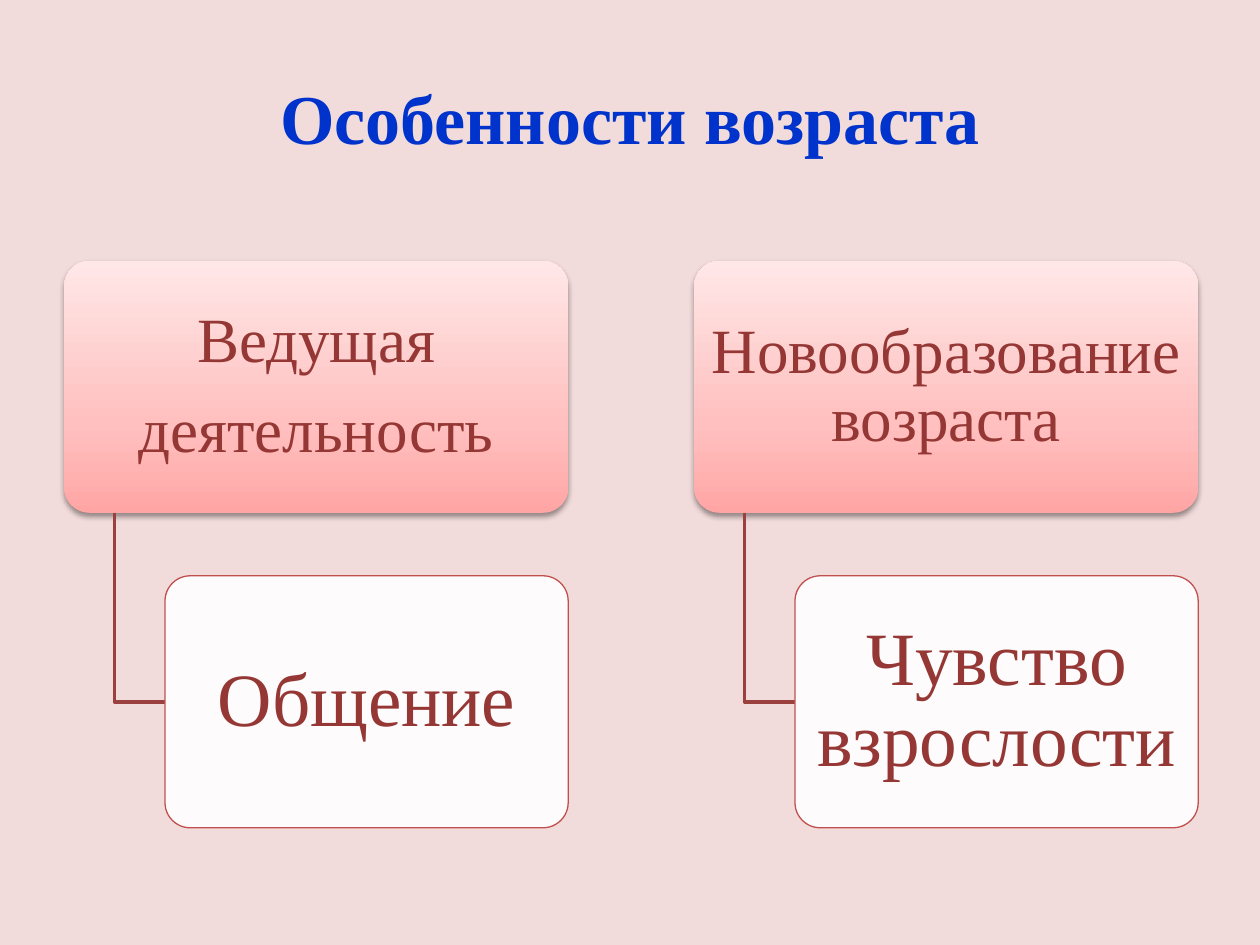
"""Build a slide with two branches that describe features of an age."""
from dataclasses import dataclass

from lxml.etree import SubElement
from pptx import Presentation
from pptx.dml.color import RGBColor
from pptx.enum.shapes import MSO_SHAPE
from pptx.enum.text import MSO_ANCHOR, PP_ALIGN
from pptx.oxml import parse_xml
from pptx.oxml.ns import nsdecls, qn
from pptx.util import Pt

SCALE = 9144


@dataclass(frozen=True)
class Theme:
    """Colours, font and type sizes of the slide."""
    back: str = "F2DCDB"
    title: str = "0033CC"
    text: str = "953735"
    link: str = "9A403E"
    edge: str = "C0504D"
    leaf: str = "FFFFFF"
    stops: tuple = ((0, "FFA6A5"), (35, "FFC0BF"), (100, "FFE7E7"))
    font: str = "Times New Roman"
    head: int = 40
    main: int = 36
    sub: int = 43


THEME = Theme()


def px(*nums):
    """Turn px lengths into EMU."""
    return [num * SCALE for num in nums]


def apply(item, attrs):
    """Set each named attribute on an item."""
    for name, value in attrs.items():
        setattr(item, name, value)


def style(run, size, color, bold=False):
    """Format the font of a run."""
    apply(run.font, {"name": THEME.font, "size": Pt(size), "bold": bold})
    run.font.color.rgb = RGBColor.from_string(color)


def add_title(slide, text):
    """Place and format the title."""
    title = slide.shapes.title
    apply(title, dict(zip(("left", "top", "width", "height"), px(50, 30, 900, 125))))
    title.text_frame.vertical_anchor = MSO_ANCHOR.MIDDLE
    para = title.text_frame.paragraphs[0]
    para.alignment = PP_ALIGN.CENTER
    run = para.add_run()
    run.text = text
    style(run, THEME.head, THEME.title, True)


def add_text(shape, lines, size, side, edge):
    """Fill a box with centred paragraphs."""
    frame = shape.text_frame
    wide, high = px(side, edge)
    apply(frame, {
        "word_wrap": True, "vertical_anchor": MSO_ANCHOR.MIDDLE,
        "margin_left": wide, "margin_right": wide,
        "margin_top": high, "margin_bottom": high,
    })
    for index, line in enumerate(lines):
        para = frame.add_paragraph() if index else frame.paragraphs[0]
        apply(para, {"alignment": PP_ALIGN.CENTER, "line_spacing": 0.9})
        after = SubElement(para._p.get_or_add_pPr(), qn("a:spcAft"))
        SubElement(after, qn("a:spcPct"), val="35000")
        run = para.add_run()
        run.text = line
        style(run, size, THEME.text)


def add_box(slide, *area):
    """Add a rounded box without a shadow."""
    box = slide.shapes.add_shape(MSO_SHAPE.ROUNDED_RECTANGLE, *px(*area))
    box.adjustments[0] = 0.1
    box.shadow.inherit = False
    return box


def add_main(slide, left, top, lines):
    """Add a shaded main box with a soft shadow."""
    box = add_box(slide, left, top, 400, 200)
    box.line.fill.background()
    stops = "".join(
        f'<a:gs pos="{pos * 1000}"><a:srgbClr val="{color}"/></a:gs>'
        for pos, color in THEME.stops)
    props = box._element.spPr
    props.find(qn("a:prstGeom")).addnext(parse_xml(
        f'<a:gradFill {nsdecls("a")} rotWithShape="1"><a:gsLst>{stops}</a:gsLst>'
        '<a:lin ang="16200000" scaled="0"/></a:gradFill>'))
    props.find(qn("a:effectLst")).append(parse_xml(
        f'<a:outerShdw {nsdecls("a")} blurRad="40000" dist="20000" dir="5400000" '
        'rotWithShape="0"><a:srgbClr val="000000"><a:alpha val="38000"/>'
        '</a:srgbClr></a:outerShdw>'))
    add_text(box, lines, THEME.main, 7, 5)


def add_link(slide, left, top):
    """Add the elbow line from a main box to its leaf."""
    pen = slide.shapes.build_freeform(left, top, SCALE)
    pen.add_line_segments([(left, top + 150), (left + 40, top + 150)], close=False)
    link = pen.convert_to_shape()
    link.shadow.inherit = False
    link.fill.background()
    link.line.color.rgb = RGBColor.from_string(THEME.link)
    link.line.width = Pt(2)


def add_leaf(slide, left, top, line):
    """Add a pale leaf box."""
    box = add_box(slide, left, top, 320, 200)
    box.fill.solid()
    box.fill.fore_color.rgb = RGBColor.from_string(THEME.leaf)
    color = box._element.spPr.find(qn("a:solidFill")).find(qn("a:srgbClr"))
    SubElement(color, qn("a:alpha"), val="90000")
    box.line.color.rgb = RGBColor.from_string(THEME.edge)
    box.line.width = Pt(0.75)
    add_text(box, [line], THEME.sub, 9, 6)


def add_branch(slide, left, lines, leaf):
    """Add a main box, its link and its leaf."""
    top = 207
    add_main(slide, left, top, lines)
    add_link(slide, left + 40, top + 200)
    add_leaf(slide, left + 80, top + 250, leaf)


def main():
    """Build and save the slide."""
    deck = Presentation()
    deck.slide_width, deck.slide_height = px(1000, 750)
    slide = deck.slides.add_slide(deck.slide_layouts[5])
    slide.background.fill.solid()
    slide.background.fill.fore_color.rgb = RGBColor.from_string(THEME.back)
    add_title(slide, "Особенности возраста")
    branches = (
        (["Ведущая", "деятельность"], "Общение"),
        (["Новообразование возраста"], "Чувство взрослости"),
    )
    for index, (lines, leaf) in enumerate(branches):
        add_branch(slide, 51 + 500 * index, lines, leaf)
    deck.save("out.pptx")


if __name__ == "__main__":
    main()
